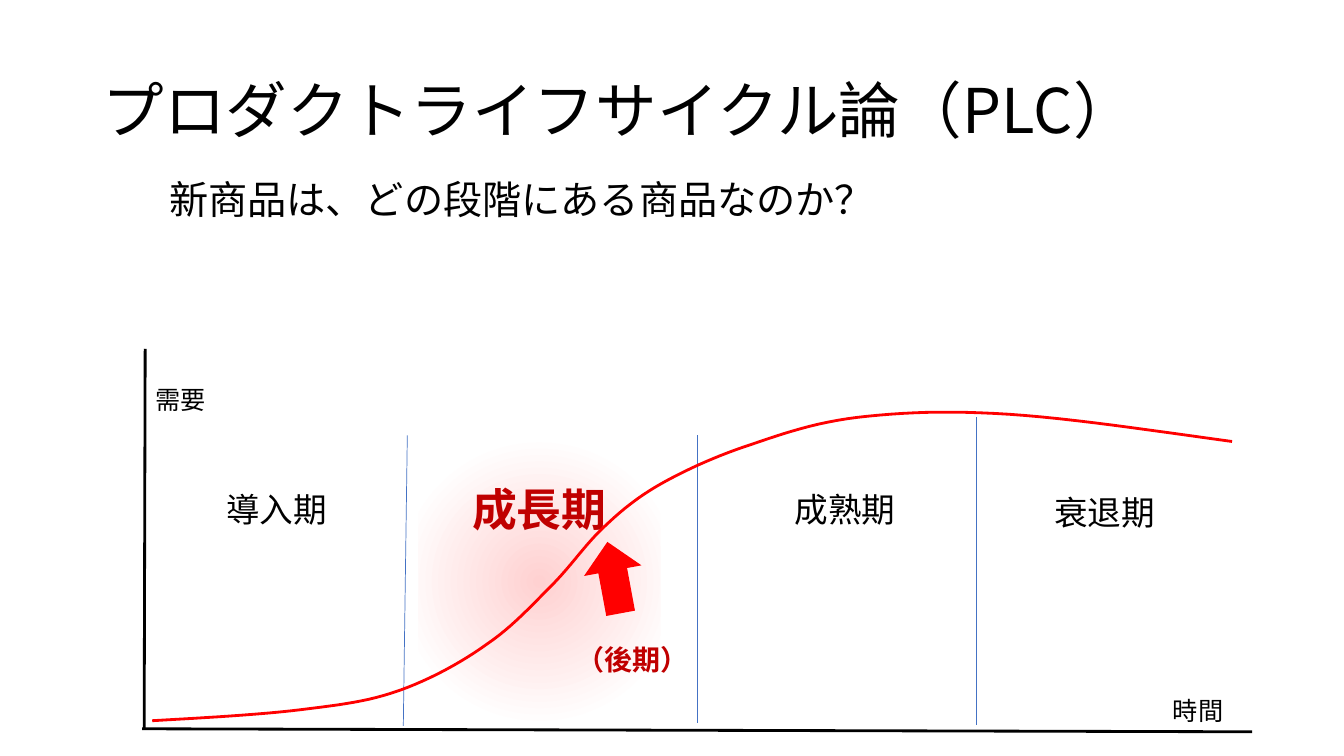
from dataclasses import dataclass

from lxml import etree
from pptx import Presentation
from pptx.dml.color import RGBColor
from pptx.enum.shapes import MSO_CONNECTOR, MSO_SHAPE
from pptx.enum.text import MSO_ANCHOR, MSO_AUTO_SIZE, PP_ALIGN
from pptx.oxml.ns import qn
from pptx.util import Pt

PX = 9144  # EMU per px, 100 px to the inch
LEFT, CENTER, RIGHT = PP_ALIGN.LEFT, PP_ALIGN.CENTER, PP_ALIGN.RIGHT
TOP, MIDDLE = MSO_ANCHOR.TOP, MSO_ANCHOR.MIDDLE
GROW = MSO_AUTO_SIZE.SHAPE_TO_FIT_TEXT
STRAIGHT = MSO_CONNECTOR.STRAIGHT
ROUNDED, ARROW = MSO_SHAPE.ROUNDED_RECTANGLE, MSO_SHAPE.RIGHT_ARROW


@dataclass(frozen=True)
class Theme:
    black: str = "000000"
    red: str = "FF0000"
    accent: str = "C00000"
    divider: str = "4472C4"
    glow: tuple = ((0, "FFD1D1"), (77, "FFFFFF"), (100, "FFFFFF"))
    japanese: str = "Noto Sans CJK JP"
    body: str = "Calibri"
    axis: str = "Arial"
    title_size: int = 44
    subtitle_size: int = 28
    focus_size: int = 32
    stage_size: int = 24
    note_size: int = 20
    axis_size: int = 18
    thick: float = 2
    thin: float = 0.5


THEME = Theme()

# Demand curve: a start, then cubic segments (two controls and an end)
CURVE_START = (151, 715)
CURVE_SEGMENTS = [
    ((204, 712), (258, 709), (299, 704)),
    ((339, 699), (365, 696), (396, 685)),
    ((427, 674), (458, 657), (483, 639)),
    ((508, 622), (528, 600), (547, 581)),
    ((567, 561), (582, 538), (601, 521)),
    ((620, 503), (637, 490), (661, 477)),
    ((685, 464), (714, 451), (745, 441)),
    ((777, 430), (809, 419), (851, 414)),
    ((894, 409), (939, 407), (1001, 411)),
    ((1062, 415), (1142, 427), (1222, 438)),
]
STEPS = 12


def add_label(slide, text, box, size, font=THEME.body, color=THEME.black,
              align=CENTER, bold=False, anchor=TOP, grow=True):
    shape = slide.shapes.add_textbox(*(value * PX for value in box))
    frame = shape.text_frame
    frame.text = text
    frame.word_wrap = True
    frame.vertical_anchor = anchor
    if grow:
        frame.auto_size = GROW
    paragraph = frame.paragraphs[0]
    paragraph.alignment = align
    run = paragraph.runs[0]
    run.font.size = Pt(size)
    run.font.bold = bold
    run.font.name = font
    run.font.color.rgb = RGBColor.from_string(color)
    # East Asian typeface follows the Latin one
    east_asian = etree.Element(qn("a:ea"), typeface=THEME.japanese)
    run.font._element.find(qn("a:latin")).addnext(east_asian)
    return paragraph


def add_line(slide, start, end, color, width):
    line = slide.shapes.add_connector(
        STRAIGHT, *(value * PX for value in start + end))
    line.line.color.rgb = RGBColor.from_string(color)
    line.line.width = Pt(width)
    etree.SubElement(line._element.spPr, qn("a:effectLst"))


def add_glow(slide, box):
    shape = slide.shapes.add_shape(ROUNDED, *(value * PX for value in box))
    shape.shadow.inherit = False
    shape.line.fill.background()
    shape.fill.gradient()
    # Radial gradient from the centre
    gradient = shape._element.spPr.find(qn("a:gradFill"))
    for child in list(gradient):
        gradient.remove(child)
    stops = etree.SubElement(gradient, qn("a:gsLst"))
    for position, color in THEME.glow:
        stop = etree.SubElement(stops, qn("a:gs"), pos=str(position * 1000))
        etree.SubElement(stop, qn("a:srgbClr"), val=color)
    radial = etree.SubElement(gradient, qn("a:path"), path="circle")
    etree.SubElement(radial, qn("a:fillToRect"),
                     {side: "50000" for side in "ltrb"})


def add_arrow(slide, box, rotation):
    shape = slide.shapes.add_shape(ARROW, *(value * PX for value in box))
    shape.rotation = rotation
    shape.shadow.inherit = False
    shape.fill.solid()
    shape.fill.fore_color.rgb = RGBColor.from_string(THEME.red)
    shape.line.fill.background()


def bezier_point(points, t):
    weights = ((1 - t) ** 3, 3 * t * (1 - t) ** 2, 3 * t * t * (1 - t), t ** 3)
    return tuple(round(PX * sum(weight * point[axis] for weight, point
                                in zip(weights, points))) for axis in (0, 1))


def add_curve(slide, start, segments):
    vertices = []
    previous = start
    for segment in segments:
        vertices += [bezier_point((previous, *segment), step / STEPS)
                     for step in range(1, STEPS + 1)]
        previous = segment[-1]
    builder = slide.shapes.build_freeform(start[0] * PX, start[1] * PX)
    builder.add_line_segments(vertices, close=False)
    shape = builder.convert_to_shape()
    shape.shadow.inherit = False
    shape.fill.background()
    shape.line.color.rgb = RGBColor.from_string(THEME.red)
    shape.line.width = Pt(THEME.thick)


def main():
    presentation = Presentation()
    presentation.slide_width = 1333 * PX
    presentation.slide_height = 750 * PX
    slide = presentation.slides.add_slide(presentation.slide_layouts[6])

    # Highlight behind the growth stage
    add_glow(slide, (415, 433, 240, 288))

    # Headings
    title = add_label(slide, "プロダクトライフサイクル論（PLC）",
                      (92, 40, 1150, 145), THEME.title_size, THEME.japanese,
                      align=LEFT, anchor=MIDDLE, grow=False)
    title.line_spacing = 0.9
    add_label(slide, "新商品は、どの段階にある商品なのか？", (158, 169, 925, 57),
              THEME.subtitle_size, THEME.japanese, align=LEFT)

    # Axes
    for start, end in [((141, 723), (1242, 726)), ((143, 723), (144, 346))]:
        add_line(slide, start, end, THEME.black, THEME.thick)
    add_label(slide, "需要", (144, 376, 80, 40), THEME.axis_size, align=LEFT)
    add_label(slide, "時間", (1151, 685, 72, 40), THEME.axis_size, THEME.axis,
              align=RIGHT)

    # Stage dividers
    for start, end in [((400, 720), (404, 432)), ((692, 717), (692, 432)),
                       ((968, 719), (968, 414))]:
        add_line(slide, start, end, THEME.divider, THEME.thin)

    # Stage names
    for name, box in [("導入期", (196, 480, 157, 50)),
                      ("成熟期", (771, 480, 134, 50)),
                      ("衰退期", (1032, 483, 127, 50))]:
        add_label(slide, name, box, THEME.stage_size)
    add_label(slide, "成長期", (457, 473, 156, 64), THEME.focus_size,
              color=THEME.accent, bold=True)

    # Demand curve and the current position on it
    add_arrow(slide, (573, 544, 72, 58), 259.5)
    add_curve(slide, CURVE_START, CURVE_SEGMENTS)
    add_label(slide, "（後期）", (549, 633, 156, 44), THEME.note_size,
              color=THEME.accent, bold=True)

    presentation.save("out.pptx")


if __name__ == "__main__":
    main()
